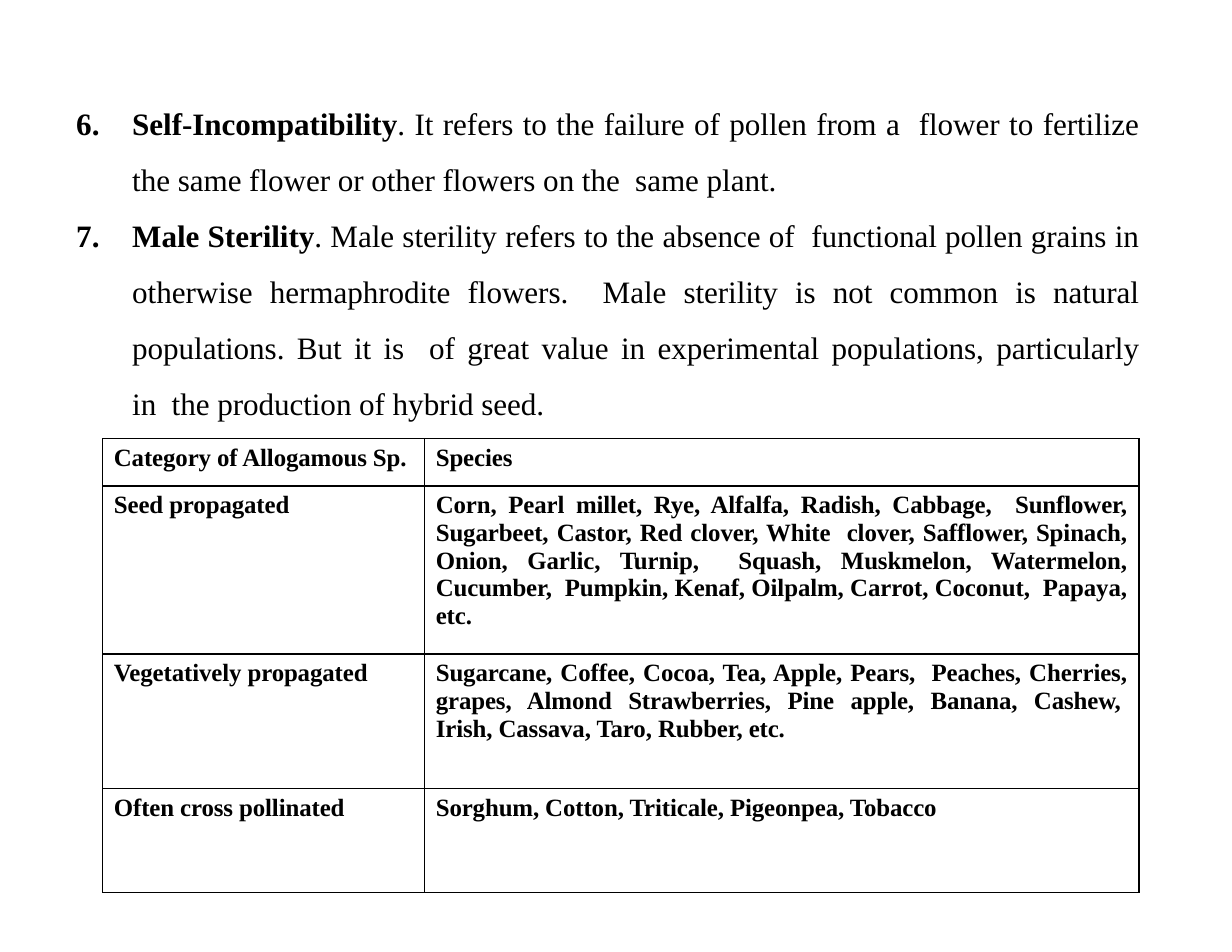
from lxml.etree import SubElement
from pptx import Presentation
from pptx.dml.color import RGBColor
from pptx.enum.text import MSO_AUTO_SIZE, PP_ALIGN
from pptx.oxml.ns import qn
from pptx.util import Cm, Pt

COLOURS = {"ink": "000000", "rule": "000000"}
FONT = "Times New Roman"
NBSP = chr(160)  # keeps a word tied to its neighbour

TRAITS = [
    ("Self-Incompatibility",
     ". It refers to the failure of pollen from a  flower to fertilize the same "
     "flower or other flowers on the  same plant."),
    ("Male Sterility",
     ". Male sterility refers to the absence of  functional pollen grains in "
     "otherwise hermaphrodite flowers.  Male sterility is not common is natural "
     "populations. But it is  of great value in experimental populations, "
     f"particularly in{NBSP * 2}the production of hybrid seed."),
]
FIRST_NUMBER = 6

SPECIES = [
    ("Category of Allogamous Sp.", "Species"),
    ("Seed propagated",
     "Corn, Pearl millet, Rye, Alfalfa, Radish, Cabbage,  Sunflower, Sugarbeet, "
     "Castor, Red clover, White  clover, Safflower, Spinach, Onion, Garlic, "
     "Turnip,  Squash, Muskmelon, Watermelon, Cucumber,  Pumpkin, Kenaf, Oilpalm, "
     "Carrot, Coconut,  Papaya, etc."),
    ("Vegetatively propagated",
     "Sugarcane, Coffee, Cocoa, Tea, Apple, Pears,  Peaches, Cherries, grapes, "
     f"Almond Strawberries, Pine apple, Banana, Cashew,{NBSP} Irish, Cassava, "
     "Taro, Rubber, etc."),
    ("Often cross pollinated",
     "Sorghum, Cotton, Triticale, Pigeonpea, Tobacco"),
]


def add_span(para, text, size=16, bold=False, colour="ink", spacing=-5):
    """Add formatted text; spacing is in hundredths of a point."""
    span = para.add_run()
    span.text = text
    span.font.name = FONT
    span.font.size = Pt(size)
    span.font.bold = bold
    span.font.color.rgb = RGBColor.from_string(COLOURS[colour])
    span.font._element.set("spc", str(spacing))


class SlideWriter:
    def __init__(self, deck):
        self.page = deck.slides.add_slide(deck.slide_layouts[6])

    def numbered_list(self, items, start, left, top, width, height):
        box = self.page.shapes.add_textbox(Cm(left), Cm(top), Cm(width), Cm(height))
        frame = box.text_frame
        frame.word_wrap = True
        frame.auto_size = MSO_AUTO_SIZE.SHAPE_TO_FIT_TEXT
        frame.margin_left = frame.margin_right = frame.margin_bottom = 0
        frame.margin_top = Cm(0.03)
        for index, (term, meaning) in enumerate(items):
            para = frame.add_paragraph() if index else frame.paragraphs[0]
            self.number(para, start)
            para.alignment = PP_ALIGN.JUSTIFY
            para.line_spacing = 1.5
            add_span(para, term, size=20, bold=True)
            add_span(para, meaning, size=20)

    def number(self, para, start):
        properties = para._p.get_or_add_pPr()
        properties.set("marL", str(Cm(1.3)))
        properties.set("indent", str(-Cm(1.27)))
        SubElement(properties, qn("a:buAutoNum"), type="arabicPeriod", startAt=str(start))

    def table(self, rows, left, top, widths, heights):
        frame = self.page.shapes.add_table(
            len(rows), len(widths), Cm(left), Cm(top), Cm(sum(widths)), Cm(sum(heights)))
        grid = frame.table
        grid.first_row = grid.horz_banding = False
        for column, width in zip(grid.columns, widths):
            column.width = Cm(width)
        for row, height, texts in zip(grid.rows, heights, rows):
            row.height = Cm(height)
            for cell, text in zip(row.cells, texts):
                self.border(cell)
                cell.fill.background()
                add_span(cell.text_frame.paragraphs[0], text, bold=True)
        # Species lists are justified below the heading
        for row in list(grid.rows)[1:]:
            row.cells[1].text_frame.paragraphs[0].alignment = PP_ALIGN.JUSTIFY

    def border(self, cell):
        properties = cell._tc.get_or_add_tcPr()
        for side in ("lnL", "lnR", "lnT", "lnB"):
            line = SubElement(properties, qn(f"a:{side}"), w=str(Pt(1)))
            fill = SubElement(line, qn("a:solidFill"))
            SubElement(fill, qn("a:srgbClr"), val=COLOURS["rule"])


def main():
    deck = Presentation()
    deck.slide_width, deck.slide_height = Cm(27.94), Cm(21.59)
    writer = SlideWriter(deck)

    # Numbered definitions
    writer.numbered_list(TRAITS, FIRST_NUMBER, 1.7, 1.92, 24.13, 7.57)

    # Species by category
    writer.table(SPECIES, 2.33, 9.95, widths=(7.3, 16.2), heights=(1.07, 3.81, 3.05, 2.36))

    deck.save("out.pptx")


if __name__ == "__main__":
    main()
